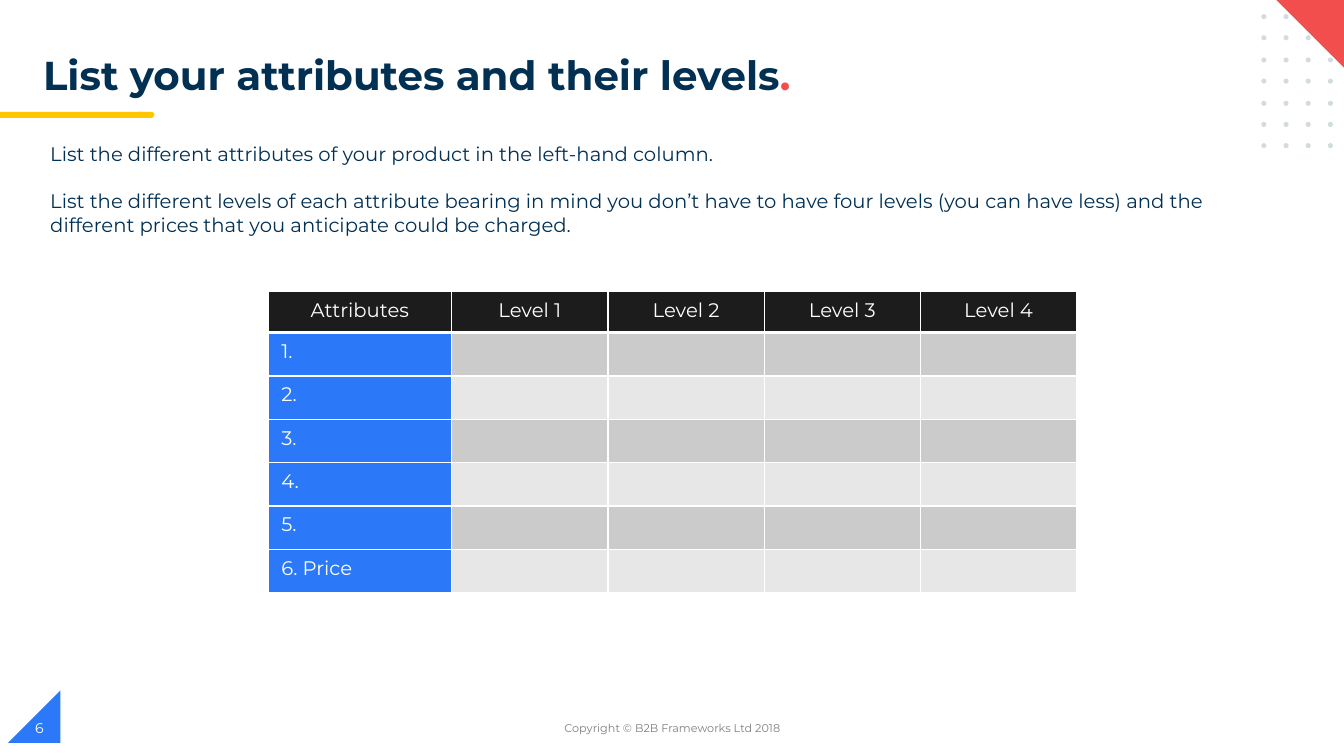
from typing import NamedTuple

from lxml import etree
from pptx import Presentation
from pptx import util as u
from pptx.dml.color import RGBColor
from pptx.enum import shapes, text
from pptx.oxml import ns

PX = 9144  # EMU per px, 100 px to the inch
FONT = "Montserrat"
NAVY, BLUE, RED, YELLOW = "023053", "2B79F8", "F24E4E", "FFC600"
WHITE, BLACK, GREY, DOT = "FFFFFF", "1C1C1C", "7F7F7F", "D1DBE0"
BANDS = ("CBCBCB", "E7E7E7")
LEFT, CENTER = text.PP_ALIGN.LEFT, text.PP_ALIGN.CENTER
TOP, MIDDLE = text.MSO_ANCHOR.TOP, text.MSO_ANCHOR.MIDDLE
KIND = shapes.MSO_SHAPE


class Box(NamedTuple):
    left: int
    top: int
    width: int
    height: int


class Decoration(NamedTuple):
    kind: KIND
    box: Box
    color: str
    rotation: int = 0


class Run(NamedTuple):
    words: str
    color: str


class Label(NamedTuple):
    box: Box
    paragraphs: list[list[Run]]
    size: float
    bold: bool = False
    align: text.PP_ALIGN = LEFT
    anchor: text.MSO_ANCHOR = TOP
    format: dict = {}


def px(length: int) -> int:
    return u.Emu(length * PX)


def emu(box: Box) -> list[int]:
    return [px(length) for length in box]


def rgb(color: str) -> RGBColor:
    return RGBColor.from_string(color)


def set_all(target, values: dict) -> None:
    for name, value in values.items():
        setattr(target, name, value)


def add_run(paragraph, run: Run, size: float, bold: bool = False) -> None:
    part = paragraph.add_run()
    part.text = run.words
    set_all(part.font, {"name": FONT, "size": u.Pt(size), "bold": bold})
    part.font.color.rgb = rgb(run.color)


def draw_decoration(slide, item: Decoration) -> None:
    shape = slide.shapes.add_shape(item.kind, *emu(item.box))
    shape.shadow.inherit = False
    shape.rotation = item.rotation
    shape.fill.solid()
    shape.fill.fore_color.rgb = rgb(item.color)
    shape.line.fill.background()


def draw_label(slide, label: Label) -> None:
    frame = slide.shapes.add_textbox(*emu(label.box)).text_frame
    set_all(frame, {"word_wrap": True, "vertical_anchor": label.anchor})
    for index, runs in enumerate(label.paragraphs):
        paragraph = frame.add_paragraph() if index else frame.paragraphs[0]
        paragraph.alignment = label.align
        set_all(paragraph, label.format)
        if index:
            paragraph.space_before = u.Pt(17)
        for run in runs:
            add_run(paragraph, run, label.size, label.bold)


def set_borders(cell, widths: dict[str, int]) -> None:
    properties = cell._tc.get_or_add_tcPr()
    for index, (side, width) in enumerate(widths.items()):
        line = etree.Element(ns.qn(f"a:ln{side}"), w=str(u.Pt(width)))
        fill = etree.SubElement(line, ns.qn("a:solidFill"))
        etree.SubElement(fill, ns.qn("a:srgbClr"), val=WHITE)
        properties.insert(index, line)


def draw_table(slide, box: Box, columns: list[int], rows: list[int],
               headings: list[str], attributes: list[str]) -> None:
    table = slide.shapes.add_table(len(rows), len(columns), *emu(box)).table
    for column, width in zip(table.columns, columns):
        column.width = px(width)
    for row, height in zip(table.rows, rows):
        row.height = px(height)
    for r in range(len(rows)):
        for c in range(len(columns)):
            cell = table.cell(r, c)
            if r == 0:
                words, color, align = headings[c], BLACK, CENTER
            elif c == 0:
                words, color, align = attributes[r - 1], BLUE, LEFT
            else:
                words, color, align = "", BANDS[(r - 1) % 2], LEFT
            side, edge = px(13), px(7 if words else 6)
            set_all(cell, {"margin_left": side, "margin_right": side,
                           "margin_top": edge, "margin_bottom": edge})
            cell.fill.solid()
            cell.fill.fore_color.rgb = rgb(color)
            set_borders(cell, {"L": 1, "R": 1, "T": 3 if r == 1 else 1,
                               "B": 3 if r == 0 else 1})
            if words:
                paragraph = cell.text_frame.paragraphs[0]
                paragraph.alignment = align
                add_run(paragraph, Run(words, WHITE), 14)


def main() -> None:
    deck = Presentation()
    set_all(deck, {"slide_width": px(1333), "slide_height": px(750)})
    slide = deck.slides.add_slide(deck.slide_layouts[6])

    # Page corner, title underline, dot grid, top corner
    dots = [Decoration(KIND.OVAL, Box(1251 + 22 * c, round(14 + 21.4 * r), 5, 5), DOT)
            for r in range(7) for c in range(4)]
    decorations = [
        Decoration(KIND.RIGHT_TRIANGLE, Box(8, 685, 52, 52), BLUE, 270),
        Decoration(KIND.FLOWCHART_TERMINATOR, Box(134, 111, 19, 6), YELLOW),
        Decoration(KIND.RECTANGLE, Box(0, 111, 141, 6), YELLOW),
        *dots,
        Decoration(KIND.RIGHT_TRIANGLE, Box(1265, -1, 72, 72), RED, 180),
    ]
    for decoration in decorations:
        draw_decoration(slide, decoration)

    # Attribute table
    draw_table(slide, Box(266, 289, 802, 299), [182] + [155] * 4, [41] + [43] * 6,
               ["Attributes"] + [f"Level {n}" for n in range(1, 5)],
               [f"{n}." for n in range(1, 6)] + ["6. Price"])

    # Title, instructions, footer, page number
    labels = [
        Label(Box(33, 49, 786, 56),
              [[Run("List your attributes and their levels", NAVY), Run(".", RED)]],
              28.8, bold=True, anchor=MIDDLE, format={"line_spacing": 0.9}),
        Label(Box(40, 136, 1197, 131), [
            [Run("List the different attributes of your product in the "
                 "left-hand column.", NAVY)],
            [Run("List the different levels of each attribute bearing in mind you "
                 "don’t have to have four levels (you can have less) and the "
                 "different prices that you anticipate could be charged.", NAVY)],
        ], 14),
        Label(Box(442, 702, 450, 40),
              [[Run("Copyright © B2B Frameworks Ltd 2018", GREY)]],
              8, align=CENTER, anchor=MIDDLE),
        Label(Box(25, 702, 300, 40), [[Run("6", WHITE)]], 10, anchor=MIDDLE),
    ]
    for label in labels:
        draw_label(slide, label)

    deck.save("out.pptx")


if __name__ == "__main__":
    main()
